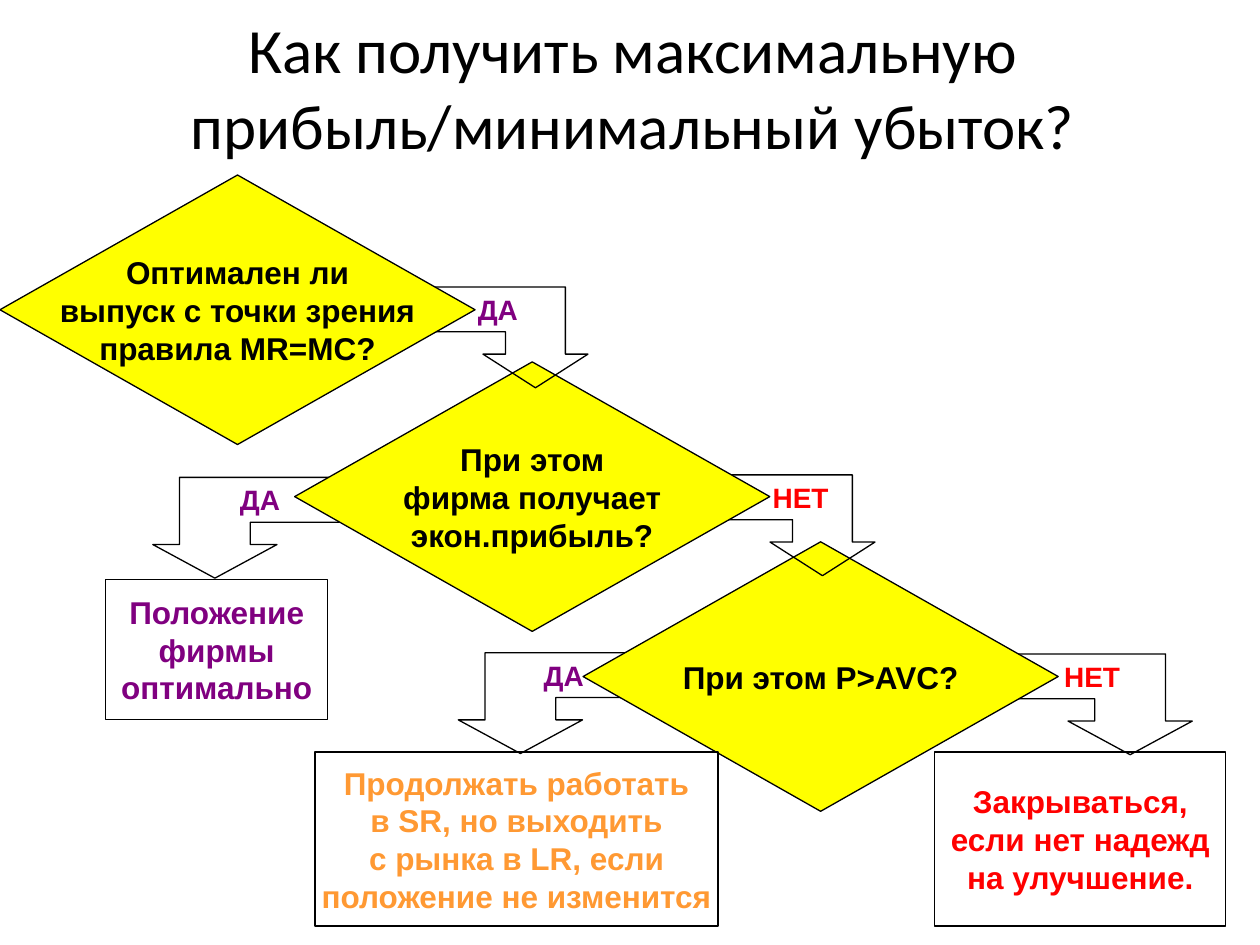
"""Build the slide with the decision flowchart for a firm's profit or loss."""
from pptx import Presentation
from pptx.dml.color import RGBColor
from pptx.enum.shapes import MSO_SHAPE as Preset
from pptx.enum.text import MSO_ANCHOR as Anchor, MSO_AUTO_SIZE as AutoSize, PP_ALIGN as Align
from pptx.util import Pt

BLACK, YELLOW, PURPLE, RED, ORANGE = "000000", "FFFF00", "800080", "FF0000", "FF9933"
DIAMOND_WIDTH, DIAMOND_HEIGHT = 271.5, 154
ARROW_HEIGHT, NECK_HEIGHT, BAND_HEIGHT = 57.6, 38.4, 25.6


def color(hex_string):
    return RGBColor.from_string(hex_string)


def style(shape, text, size, text_color, fill=None, wrap=False):
    shape.shadow.inherit = False
    shape.line.color.rgb = color(BLACK)
    shape.line.width = Pt(0.75)
    if fill:
        shape.fill.solid()
        shape.fill.fore_color.rgb = color(fill)
    else:
        shape.fill.background()
    frame = shape.text_frame
    frame.text = text
    frame.word_wrap = wrap
    frame.vertical_anchor = Anchor.MIDDLE
    for paragraph in frame.paragraphs:
        paragraph.alignment = Align.CENTER
        paragraph.font.name = "Arial"
        paragraph.font.size = Pt(size)
        paragraph.font.bold = True
        paragraph.font.color.rgb = color(text_color)


presentation = Presentation()
presentation.slide_width, presentation.slide_height = Pt(720), Pt(540)
slide = presentation.slides.add_slide(presentation.slide_layouts[5])

title = slide.shapes.title
title.left, title.top, title.width, title.height = Pt(36), Pt(21.6), Pt(651), Pt(55.4)
title.text_frame.text = "Как получить максимальную прибыль/минимальный убыток?"
title.text_frame.word_wrap = True
title.text_frame.auto_size = AutoSize.NONE
title.text_frame.vertical_anchor = Anchor.MIDDLE
heading = title.text_frame.paragraphs[0]
heading.alignment = Align.CENTER
heading.font.name = "Calibri"
heading.font.size = Pt(36)
heading.font.color.rgb = color(BLACK)

# Each exit: label, colour, tip x, top, half head width, side of the tail, label shift
levels = [
    ("При этом P>AVC?", 333.2, 309.6, [
        ("ДА", PURPLE, 297.4, 373, 35.5, 1, 7),
        ("НЕТ", RED, 645.8, 373.7, 35.5, -1, -4)]),
    ("При этом\nфирма получает\nэкон.прибыль?", 168.4, 206.8, [
        ("ДА", PURPLE, 122.8, 272.8, 35.5, 1, 8),
        ("НЕТ", RED, 470, 271.4, 30, -1, 2.5)]),
    ("Оптимален ли\nвыпуск с точки зрения\nправила MR=MC?", 0, 100, [
        ("ДА", PURPLE, 306, 164, 30, -1, -6.5)]),
]
for question, left, top, exits in levels:
    for label, label_color, tip, arrow_top, head, side, shift in exits:
        shaft, tail = head * 0.57, head * 2
        outline = [(-head, NECK_HEIGHT), (-shaft, NECK_HEIGHT), (-shaft, 0), (tail, 0),
                   (tail, BAND_HEIGHT), (shaft, BAND_HEIGHT), (shaft, NECK_HEIGHT),
                   (head, NECK_HEIGHT)]
        builder = slide.shapes.build_freeform(Pt(tip), Pt(arrow_top + ARROW_HEIGHT))
        builder.add_line_segments(
            [(Pt(tip + side * x), Pt(arrow_top + y)) for x, y in outline])
        arrow = builder.convert_to_shape()
        style(arrow, label, 16, label_color, wrap=True)
        frame = arrow.text_frame
        frame.margin_left, frame.margin_right = Pt(max(2 * shift, 0)), Pt(max(-2 * shift, 0))
        frame.margin_top, frame.margin_bottom = 0, Pt(ARROW_HEIGHT - BAND_HEIGHT)
    diamond = slide.shapes.add_shape(
        Preset.FLOWCHART_DECISION, Pt(left), Pt(top), Pt(DIAMOND_WIDTH), Pt(DIAMOND_HEIGHT))
    style(diamond, question, 18, BLACK, YELLOW)

outcomes = [
    ("Положение\nфирмы\nоптимально", PURPLE, 60.5, 331.2, 126.7, 80),
    ("Продолжать работать\nв SR, но выходить\nс рынка в LR, если\nположение не изменится",
     ORANGE, 180, 429.8, 230.4, 99.4),
    ("Закрываться,\nесли нет надежд\nна улучшение.", RED, 534.2, 429.8, 166.3, 99.4),
]
for text, text_color, *bounds in outcomes:
    box = slide.shapes.add_shape(Preset.RECTANGLE, *map(Pt, bounds))
    style(box, text, 18, text_color)

presentation.save("out.pptx")
